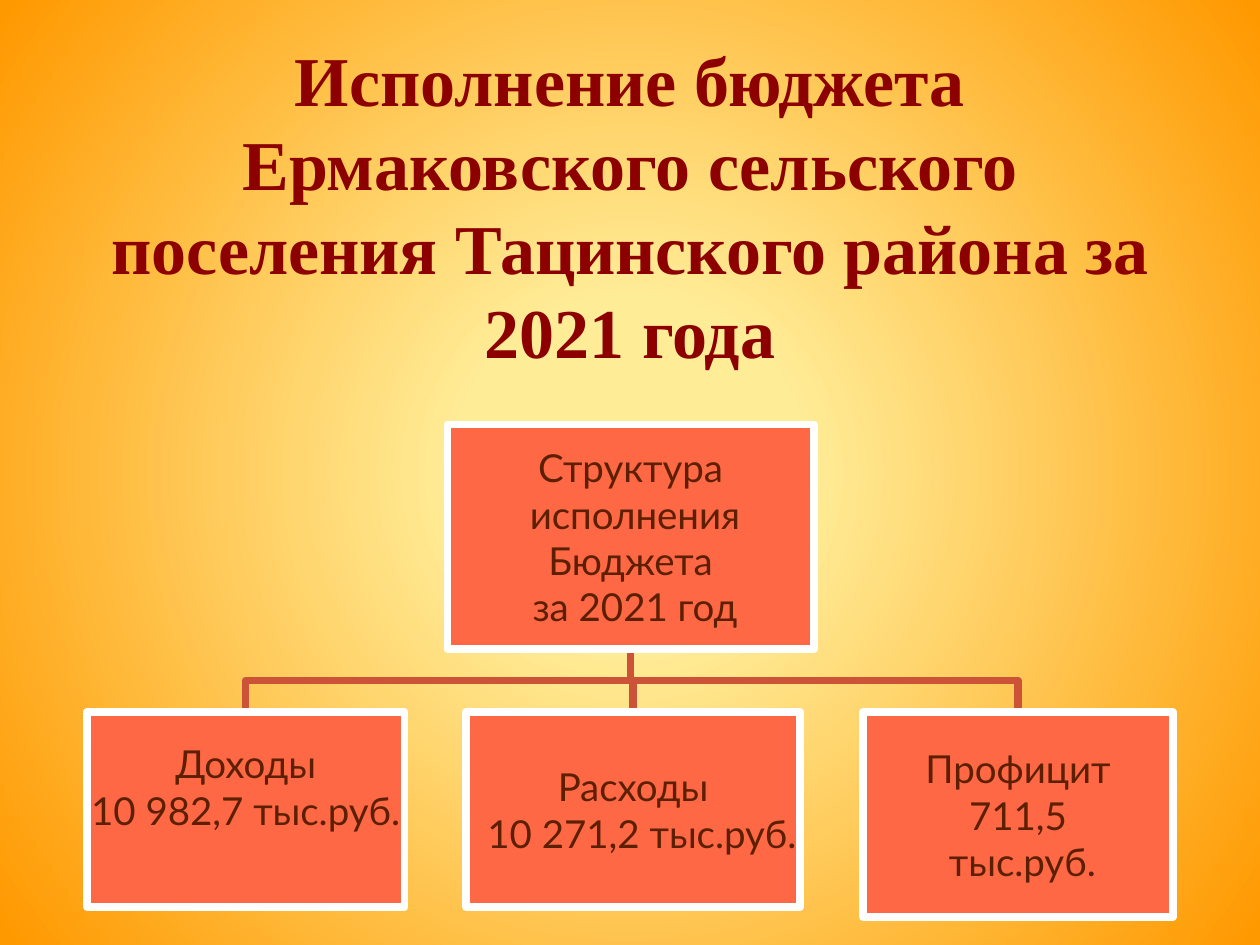
from dataclasses import dataclass

import pptx
import pptx.dml.color
import pptx.enum.shapes
import pptx.enum.text
import pptx.oxml
import pptx.oxml.ns
import pptx.util

Pt = pptx.util.Pt

COLORS = {
    "glow": "FFEC97",
    "edge": "FF9900",
    "title": "8C0000",
    "box": "FF6845",
    "border": "FFFFFF",
    "branch": "CC5337",
    "text": "5C1F00",
}
LINE_WIDTH = 4.33
INSET = 1.44
ROOT_BOTTOM = 370.8
CHILD_TOP = 406.8


@dataclass
class Line:
    text: str
    indent: float = 0


@dataclass
class Box:
    left: float
    top: float
    width: float
    height: float
    lines: list[Line]
    bottom_inset: float = INSET

    @property
    def center(self) -> float:
        return self.left + self.width / 2


ROOT = Box(255.6, 242.6, 209.5, ROOT_BOTTOM - 242.6, [
    Line("Структура"), Line("исполнения", 5), Line("Бюджета"), Line("за 2021 год", 5),
])
CHILDREN = [
    Box(49.7, CHILD_TOP, 181.4, 111.6,
        [Line("Доходы"), Line("10 982,7 тыс.руб.")], bottom_inset=27.8),
    Box(266.4, CHILD_TOP, 190.8, 111.6,
        [Line("Расходы"), Line("10 271,2 тыс.руб.", 10)]),
    Box(493.2, CHILD_TOP, 177.1, 117.4,
        [Line("Профицит"), Line("711,5"), Line("тыс.руб.", 5)]),
]


def rgb(name: str) -> pptx.dml.color.RGBColor:
    return pptx.dml.color.RGBColor.from_string(COLORS[name])


def format_paragraph(paragraph, font_name: str, size: float, color: str, bold: bool = False) -> None:
    paragraph.alignment = pptx.enum.text.PP_ALIGN.CENTER
    for run in paragraph.runs:
        run.font.name = font_name
        run.font.size = Pt(size)
        run.font.bold = bold
        run.font.color.rgb = rgb(color)


def set_background(slide) -> None:
    """Fill the slide with a gradient that spreads from its centre."""
    fill = slide.background.fill
    fill.gradient()
    for stop, position, color in zip(fill.gradient_stops, (0.22, 0.99), ("glow", "edge")):
        stop.position = position
        stop.color.rgb = rgb(color)
    linear = slide.background._cSld.find(".//" + pptx.oxml.ns.qn("a:lin"))
    circle = pptx.oxml.parse_xml(
        f'<a:path {pptx.oxml.ns.nsdecls("a")} path="circle">'
        '<a:fillToRect l="50000" t="50000" r="50000" b="50000"/></a:path>'
    )
    linear.getparent().replace(linear, circle)


def add_title(slide) -> None:
    text_frame = slide.shapes.add_textbox(Pt(36), Pt(18), Pt(648), Pt(198)).text_frame
    text_frame.word_wrap = True
    text_frame.vertical_anchor = pptx.enum.text.MSO_ANCHOR.MIDDLE
    text_frame.text = "Исполнение бюджета Ермаковского сельского поселения Тацинского района за 2021 года"
    format_paragraph(text_frame.paragraphs[0], "Times New Roman", 40, "title", bold=True)


def add_branch(slide, parent: Box, child: Box) -> None:
    middle = (ROOT_BOTTOM + CHILD_TOP) / 2
    builder = slide.shapes.build_freeform(Pt(parent.center), Pt(ROOT_BOTTOM))
    corners = [(parent.center, middle), (child.center, middle), (child.center, CHILD_TOP)]
    builder.add_line_segments([(Pt(x), Pt(y)) for x, y in corners], close=False)
    shape = builder.convert_to_shape()
    shape.shadow.inherit = False
    shape.fill.background()
    shape.line.color.rgb = rgb("branch")
    shape.line.width = Pt(LINE_WIDTH)


def add_box(slide, box: Box) -> None:
    shape = slide.shapes.add_shape(
        pptx.enum.shapes.MSO_SHAPE.RECTANGLE,
        Pt(box.left), Pt(box.top), Pt(box.width), Pt(box.height),
    )
    shape.shadow.inherit = False
    shape.fill.solid()
    shape.fill.fore_color.rgb = rgb("box")
    shape.line.color.rgb = rgb("border")
    shape.line.width = Pt(LINE_WIDTH)

    text_frame = shape.text_frame
    text_frame.word_wrap = True
    text_frame.vertical_anchor = pptx.enum.text.MSO_ANCHOR.MIDDLE
    text_frame.margin_left = text_frame.margin_right = text_frame.margin_top = Pt(INSET)
    text_frame.margin_bottom = Pt(box.bottom_inset)
    text_frame.text = "\n".join(line.text for line in box.lines)
    for paragraph, line in zip(text_frame.paragraphs, box.lines):
        format_paragraph(paragraph, "Lato", 22, "text")
        if line.indent:
            paragraph._p.get_or_add_pPr().set("marL", str(Pt(line.indent)))


def main() -> None:
    presentation = pptx.Presentation()
    presentation.slide_width = Pt(720)
    presentation.slide_height = Pt(540)
    slide = presentation.slides.add_slide(presentation.slide_layouts[6])
    set_background(slide)
    add_title(slide)
    for child in CHILDREN:
        add_branch(slide, ROOT, child)
    for box in [ROOT, *CHILDREN]:
        add_box(slide, box)
    presentation.save("out.pptx")


if __name__ == "__main__":
    main()
